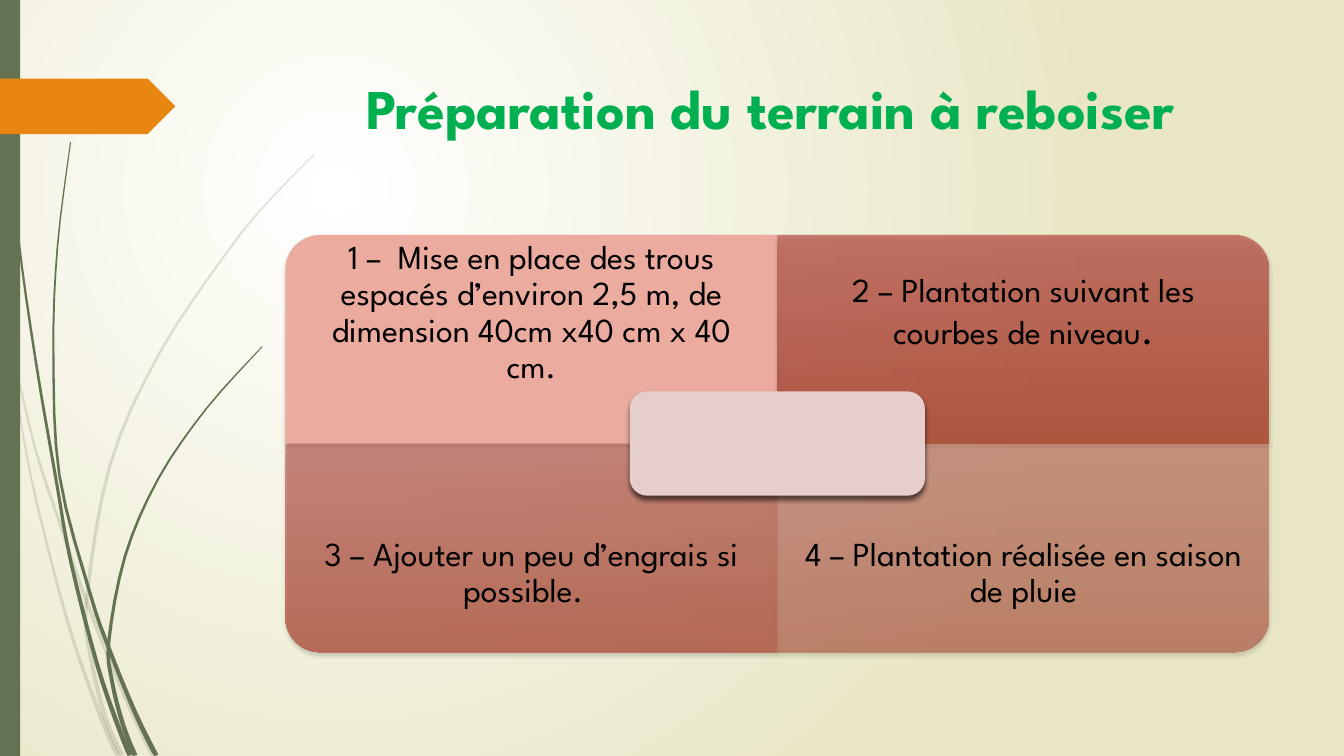
from itertools import pairwise
from math import hypot
from lxml.etree import SubElement
from pptx import Presentation
from pptx.dml.color import RGBColor
from pptx.enum.shapes import MSO_SHAPE
from pptx.enum.text import MSO_ANCHOR, MSO_AUTO_SIZE, PP_ALIGN
from pptx.oxml.ns import qn
from pptx.util import Inches, Pt

FONT = "League Spartan"
WHITE = RGBColor(0xFF, 0xFF, 0xFF)
CREAM = RGBColor(0xE8, 0xE6, 0xC4)
MOSS = RGBColor(0x64, 0x72, 0x52)
ORANGE = RGBColor(0xE7, 0x87, 0x12)
GREEN = RGBColor(0x00, 0xB0, 0x50)
BLACK = RGBColor(0, 0, 0)
SALMON = RGBColor(0xEB, 0xAB, 0x9F)
BRICK = RGBColor(0xBD, 0x59, 0x4E)
RUST = RGBColor(0xAB, 0x38, 0x23)
BLUSH = RGBColor(0xE6, 0xCE, 0xCD)

TITLE = "Préparation du terrain à reboiser "
STEPS = [
    (0, 0, 270, None, [("1 –  Mise en place des trous espacés d’environ 2,5 m, "
                        "de dimension 40cm x40 cm x 40 cm.", 24)]),
    (1, 0, 0, 77, [("2 – Plantation suivant les courbes de niveau", 24), (".", 29)]),
    (0, 1, 180, 63, [("3 – Ajouter un peu d’engrais si possible.  ", 24)]),
    (1, 1, 90, 50, [("4 – Plantation réalisée en saison de pluie", 24)]),
]
PALE_BLADES = [
    ([(0, 2.9), (0.12, 3.47), (0.35, 4.45), (0.6, 5.21), (0.86, 5.97), (1.25, 6.93),
      (1.52, 7.5)], (0, 1, 4, 6)),
    ([(0.11, 3.5), (0.3, 4.7), (0.68, 6.2), (1.01, 7.14), (1.17, 7.5)], (0, 3, 4)),
    ([(3.12, 1.53), (2.68, 1.98), (2.29, 2.45), (1.59, 3.49), (1.09, 4.62), (0.86, 5.95),
      (0.89, 6.46), (1.04, 7.11), (1.21, 7.5)], (0, 5, 7, 8)),
]
DARK_BLADES = [
    ([(0.04, 0), (0.08, 1.1), (0.18, 2.33), (0.35, 3.55), (0.56, 4.78), (0.7, 5.56),
      (0.96, 6.58), (1.17, 7.2), (1.29, 7.5)], (0, 4, 7, 8)),
    ([(0.7, 1.41), (0.57, 2.45), (0.53, 3.49), (0.59, 4.72), (0.9, 5.91), (1.08, 6.43),
      (1.34, 7.07), (1.55, 7.5)], (0, 3, 5, 7)),
    ([(2.6, 3.44), (2.05, 4.05), (1.57, 4.75), (1.24, 5.52), (1.08, 6.36), (1.11, 6.75),
      (1.22, 7.19), (1.34, 7.5)], (0, 4, 6, 7)),
]

SLIDE_W, SLIDE_H = 13.33, 7.5
GRID_LEFT, GRID_TOP = 2.83, 2.33
COL_W, ROW_H = 4.88, 2.07
TEXT_H = ROW_H * 0.75
HUB_W, HUB_H = COL_W * 0.6, ROW_H * 0.5
INSET = 0.19
TIP_W, ROOT_W = 0.01, 0.05
SAMPLES = 4
UNITS = 1000


def add_color(parent, color, alpha=100):
    tone = SubElement(parent, qn("a:srgbClr"), val=str(color))
    if alpha < 100:
        SubElement(tone, qn("a:alpha"), val=str(alpha * 1000))


def set_gradient(fill_parent, start, end, alpha=100, radial=False):
    solid = fill_parent.find(qn("a:solidFill"))
    gradient = solid.makeelement(qn("a:gradFill"), rotWithShape="0")
    stops = SubElement(gradient, qn("a:gsLst"))
    for position, color in ((0, start), (100000, end)):
        add_color(SubElement(stops, qn("a:gs"), pos=str(position)), color, alpha)
    if radial:
        rings = SubElement(gradient, qn("a:path"), path="circle")
        SubElement(rings, qn("a:fillToRect"), l="50000", t="50000", r="100000", b="100000")
    else:
        SubElement(gradient, qn("a:lin"), ang="5400000", scaled="0")
    fill_parent.replace(solid, gradient)


def paint(shape, color):
    shape.shadow.inherit = False
    shape.fill.solid()
    shape.fill.fore_color.rgb = color
    shape.line.fill.background()
    return shape


def add_box(preset, left, top, width, height, color):
    return paint(slide.shapes.add_shape(
        preset, Inches(left), Inches(top), Inches(width), Inches(height)), color)


def set_shadow(shape, alpha, blur, distance):
    effects = shape._element.spPr.find(qn("a:effectLst"))
    shadow = SubElement(effects, qn("a:outerShdw"), blurRad=str(Pt(blur)),
                        dist=str(Pt(distance)), dir="5400000", rotWithShape="0")
    add_color(shadow, BLACK, alpha)


def smooth_curve(knots):
    padded = [knots[0], *knots, knots[-1]]
    curve = []
    for a, b, c, d in zip(padded, padded[1:], padded[2:], padded[3:]):
        for step in range(SAMPLES):
            t = step / SAMPLES
            curve.append(tuple(
                q + t * (r - p) / 2 + t ** 2 * (p - 2.5 * q + 2 * r - s / 2)
                + t ** 3 * (3 * (q - r) + s - p) / 2
                for p, q, r, s in zip(a, b, c, d)))
    return curve + [knots[-1]]


def add_blade(tuft, knots, joints, alpha):
    curve = smooth_curve(knots)
    last = len(curve) - 1
    right, left = [], []
    for i, (x, y) in enumerate(curve):
        (x0, y0), (x1, y1) = curve[max(i - 1, 0)], curve[min(i + 1, last)]
        half = (TIP_W + (ROOT_W - TIP_W) * i / last) / 2 / hypot(x1 - x0, y1 - y0)
        dx, dy = (y1 - y0) * half, (x0 - x1) * half
        right.append((UNITS * (x + dx), UNITS * min(y + dy, SLIDE_H)))
        left.append((UNITS * (x - dx), UNITS * min(y - dy, SLIDE_H)))
    for start, end in pairwise(joint * SAMPLES for joint in joints):
        outline = right[start:end + 1] + left[start:end + 1][::-1]
        builder = tuft.shapes.build_freeform(*outline[0], scale=Inches(1) / UNITS)
        builder.add_line_segments(outline[1:], close=True)
        section = paint(builder.convert_to_shape(), MOSS)
        if alpha < 100:
            tone = section._element.spPr.find(qn("a:solidFill"))[0]
            SubElement(tone, qn("a:alpha"), val=str(alpha * 1000))


def add_text(paragraph, text, size, color, bold=False):
    run = paragraph.add_run()
    run.text = text
    run.font.name, run.font.size, run.font.bold = FONT, Pt(size), bold
    run.font.color.rgb = color


def add_step(col, row, turn, alpha, runs):
    left, top = GRID_LEFT + col * COL_W, GRID_TOP + row * ROW_H
    width, height = (ROW_H, COL_W) if turn % 180 else (COL_W, ROW_H)
    quarter = add_box(MSO_SHAPE.ROUND_1_RECTANGLE, left + (COL_W - width) / 2,
                      top + (ROW_H - height) / 2, width, height, SALMON)
    quarter.rotation = turn
    if alpha:
        set_gradient(quarter._element.spPr, BRICK, RUST, alpha)
    set_shadow(quarter, 25, 3, 2)
    caption = slide.shapes.add_textbox(
        Inches(left), Inches(top + row * (ROW_H - TEXT_H)), Inches(COL_W), Inches(TEXT_H))
    frame = caption.text_frame
    frame.word_wrap = True
    frame.vertical_anchor = MSO_ANCHOR.MIDDLE
    frame.margin_left = frame.margin_right = Inches(INSET)
    frame.margin_top = frame.margin_bottom = Inches(INSET)
    paragraph = frame.paragraphs[0]
    paragraph.alignment = PP_ALIGN.CENTER
    paragraph.line_spacing = 0.9
    paragraph.space_after = Pt(8.4)
    for text, size in runs:
        add_text(paragraph, text, size, BLACK)


deck = Presentation()
deck.slide_width, deck.slide_height = Inches(SLIDE_W), Inches(SLIDE_H)
slide = deck.slides.add_slide(deck.slide_layouts[5])
slide.background.fill.solid()
slide.background.fill.fore_color.rgb = CREAM
set_gradient(slide._element.cSld.find(qn("p:bg")).find(qn("p:bgPr")), WHITE, CREAM, radial=True)

for blades, alpha in ((PALE_BLADES, 20), (DARK_BLADES, 100)):
    tuft = slide.shapes.add_group_shape()
    for knots, joints in blades:
        add_blade(tuft, knots, joints, alpha)
add_box(MSO_SHAPE.RECTANGLE, 0, 0, 0.2, SLIDE_H, MOSS)
add_box(MSO_SHAPE.PENTAGON, 0, 0.78, 1.74, 0.55, ORANGE)

title = slide.shapes.title
title.left, title.top, title.width, title.height = map(Inches, (2.84, 0.68, 9.75, 1.4))
title.text_frame.vertical_anchor = MSO_ANCHOR.TOP
title.text_frame.auto_size = MSO_AUTO_SIZE.NONE
heading = title.text_frame.paragraphs[0]
heading.alignment = PP_ALIGN.CENTER
add_text(heading, TITLE, 40, GREEN, bold=True)

for step in STEPS:
    add_step(*step)
hub = add_box(MSO_SHAPE.ROUNDED_RECTANGLE, GRID_LEFT + COL_W - HUB_W / 2,
              GRID_TOP + ROW_H - HUB_H / 2, HUB_W, HUB_H, BLUSH)
set_shadow(hub, 60, 4, 3)

deck.save("out.pptx")
